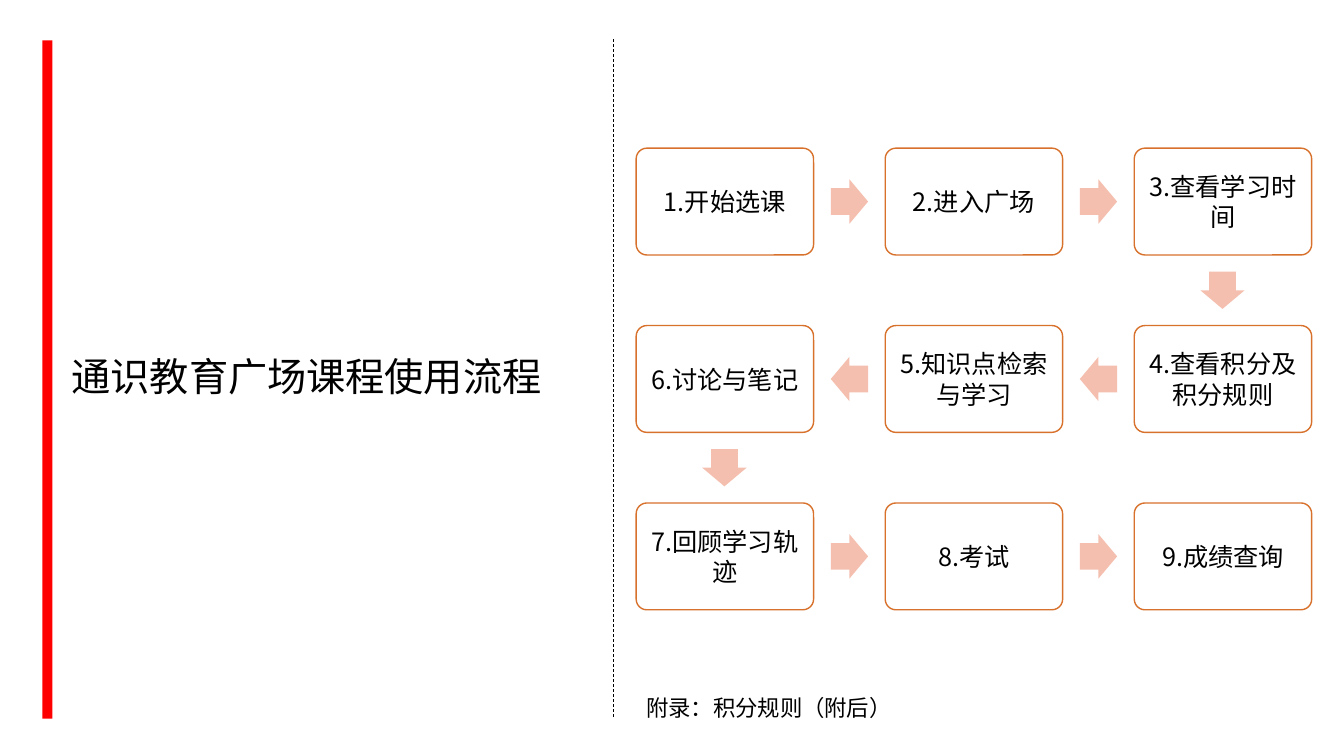
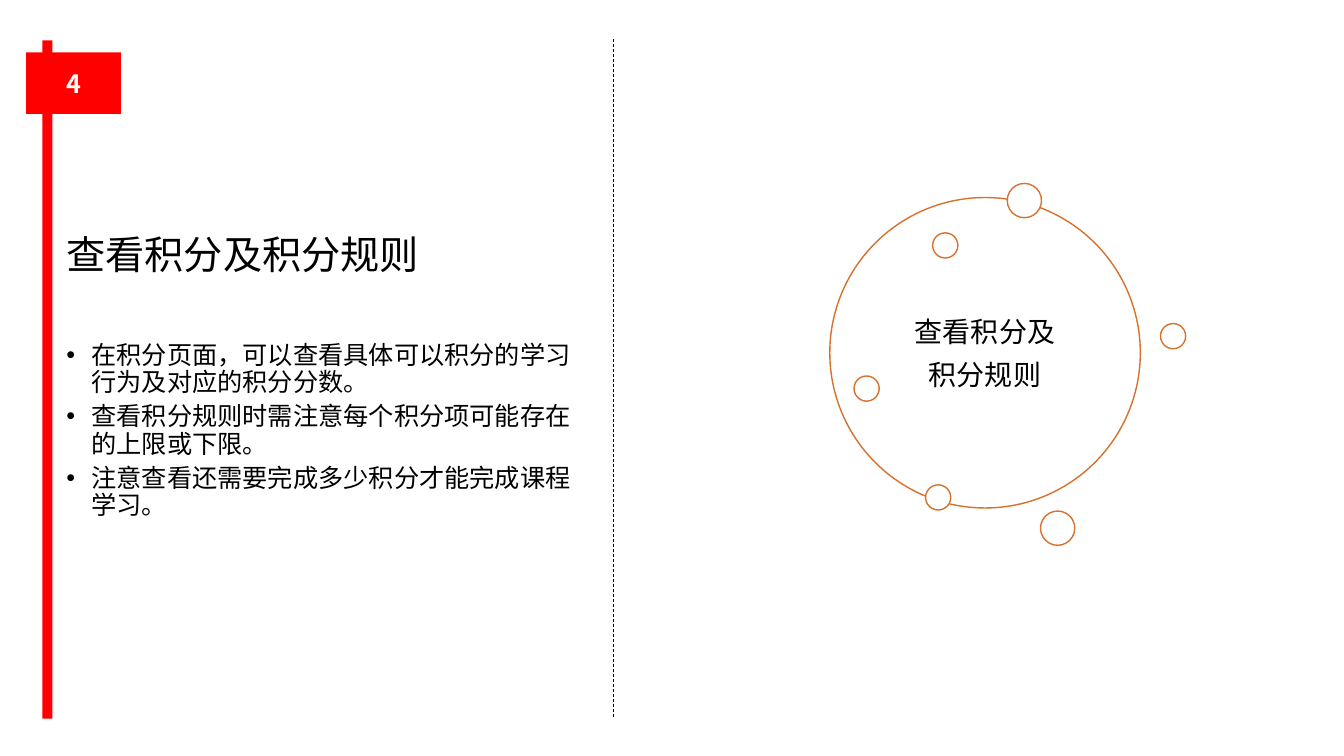
from lxml.etree import SubElement
from pptx import Presentation
from pptx.dml.color import RGBColor
from pptx.enum.dml import MSO_LINE
from pptx.enum.shapes import MSO_CONNECTOR, MSO_SHAPE
from pptx.enum.text import MSO_ANCHOR, MSO_AUTO_SIZE, PP_ALIGN
from pptx.oxml.ns import qn
from pptx.util import Pt

PX = 9144  # one hundredth of an inch
COLORS = {"red": "FF0000", "black": "000000", "white": "FFFFFF",
          "edge": "D7712C", "arrow": "F4BFAE"}
FONT = "Noto Sans CJK SC"

STEPS = ["1.开始选课", "2.进入广场", "3.查看学习时间",
         "4.查看积分及积分规则", "5.知识点检索与学习", "6.讨论与笔记",
         "7.回顾学习轨迹", "8.考试", "9.成绩查询"]
POINTS = ["在积分页面，可以查看具体可以积分的学习行为及对应的积分分数。",
          "查看积分规则时需注意每个积分项可能存在的上限或下限。",
          "注意查看还需要完成多少积分才能完成课程学习。"]
# left, top, size
DOTS = [(999, 182, 34), (918, 481, 25), (1151, 321, 25),
        (1032, 507, 34), (925, 231, 25), (847, 373, 25)]


def color(name):
    return RGBColor.from_string(COLORS[name])


def scale(*sizes):
    return [size * PX for size in sizes]


class Deck:
    def __init__(self):
        self.prs = Presentation()
        self.prs.slide_width, self.prs.slide_height = scale(1333, 750)
        self.slide = None

    def start(self, title, box, font=FONT):
        """Add a slide with its red bar, dashed divider and title."""
        self.slide = self.prs.slides.add_slide(self.prs.slide_layouts[5])
        self.shape(MSO_SHAPE.RECTANGLE, (42, 40, 10, 673), "red")
        self.divide(608, 39, 712)
        head = self.slide.shapes.title
        head.left, head.top, head.width, head.height = scale(*box)
        self.label(head, [title], 28, font=font, ratio=0.9)

    def shape(self, kind, box, fill, line=None):
        shape = self.slide.shapes.add_shape(kind, *scale(*box))
        shape.shadow.inherit = False
        shape.fill.solid()
        shape.fill.fore_color.rgb = color(fill)
        if line:
            shape.line.color.rgb = color(line)
            shape.line.width = Pt(1)
        else:
            shape.line.fill.background()
        return shape

    def divide(self, x, top, bottom):
        line = self.slide.shapes.add_connector(
            MSO_CONNECTOR.STRAIGHT, *scale(x, top, x, bottom))
        line.line.color.rgb = color("black")
        line.line.width = Pt(0.5)
        line.line.dash_style = MSO_LINE.DASH
        SubElement(line._element.spPr, qn("a:effectLst"))

    def label(self, shape, lines, size, font=FONT, ink="black", bold=False,
              align=PP_ALIGN.LEFT, anchor=MSO_ANCHOR.MIDDLE, ratio=1.0,
              gap=0, bullet=None, inset=(10, 5)):
        """Fill a shape with one paragraph per line, gap points apart."""
        side, end = scale(*inset)
        frame = shape.text_frame
        style = {"word_wrap": True, "auto_size": MSO_AUTO_SIZE.NONE,
                 "vertical_anchor": anchor, "margin_left": side,
                 "margin_right": side, "margin_top": end,
                 "margin_bottom": end}
        for key, value in style.items():
            setattr(frame, key, value)
        for index, line in enumerate(lines):
            para = frame.add_paragraph() if index else frame.paragraphs[0]
            if bullet:
                self.mark(para, bullet)
            form = {"alignment": align, "line_spacing": ratio,
                    "space_before": Pt(gap if index else 0)}
            for key, value in form.items():
                setattr(para, key, value)
            run = para.add_run()
            run.text = line
            for key, value in {"name": font, "size": Pt(size),
                               "bold": bold}.items():
                setattr(run.font, key, value)
            run.font.color.rgb = color(ink)
            SubElement(run._r.get_or_add_rPr(), qn("a:ea"), typeface=FONT)

    def mark(self, para, sign):
        """Give a paragraph a hanging bullet."""
        props = para._p.get_or_add_pPr()
        props.set("marL", str(25 * PX))
        props.set("indent", str(-25 * PX))
        SubElement(props, qn("a:buFont"), typeface="Arial")
        SubElement(props, qn("a:buChar"), char=sign)

    def text(self, box, lines, size, **style):
        area = self.slide.shapes.add_textbox(*scale(*box))
        self.label(area, lines, size, **style)

    def card(self, box, step):
        card = self.shape(MSO_SHAPE.ROUNDED_RECTANGLE, box, "white", "edge")
        card.adjustments[0] = 0.1
        self.label(card, [step], 18, align=PP_ALIGN.CENTER, inset=(4, 7))

    def arrow(self, box, angle):
        arrow = self.shape(MSO_SHAPE.RIGHT_ARROW, box, "arrow")
        arrow.adjustments[0] = 0.6
        arrow.rotation = angle

    def flow(self, steps, left, top, cols=3):
        """Lay the steps out in rows that turn back and forth."""
        wide, high, step_x, step_y = 176, 106, 247, 176
        long, thick = 37, 44
        spots = []
        for index in range(len(steps)):
            row, col = divmod(index, cols)
            if row % 2:
                col = cols - 1 - col
            spots.append((left + col * step_x, top + row * step_y))
        for (x, y), step in zip(spots, steps):
            self.card((x, y, wide, high), step)
        for (x, y), (to_x, to_y) in zip(spots, spots[1:]):
            angle = 90 if to_y > y else 0 if to_x > x else 180
            self.arrow(((x + to_x + wide - long) // 2,
                        (y + to_y + high - thick) // 2, long, thick), angle)

    def ring(self, box, lines, dots):
        ring = self.shape(MSO_SHAPE.OVAL, box, "white", "edge")
        self.label(ring, lines, 20, align=PP_ALIGN.CENTER, gap=7,
                   inset=(8, 8))
        for x, y, size in dots:
            self.shape(MSO_SHAPE.OVAL, (x, y, size, size), "white", "edge")

    def badge(self, number):
        badge = self.shape(MSO_SHAPE.RECTANGLE, (26, 52, 94, 61), "red")
        self.label(badge, [number], 18, ink="white", bold=True,
                   align=PP_ALIGN.CENTER)


def main():
    deck = Deck()
    deck.start("通识教育广场课程使用流程", (61, 39, 524, 673), "Arial")
    deck.flow(STEPS, 631, 147)
    deck.text((631, 684, 524, 37), ["附录：积分规则（附后）"], 16,
              anchor=MSO_ANCHOR.TOP)

    deck.start("查看积分及积分规则", (56, 225, 530, 60))
    deck.text((56, 320, 530, 216), POINTS, 18, ratio=0.9, gap=5, bullet="•")
    deck.badge("4")
    deck.ring((823, 196, 308, 308), ["查看积分及", "积分规则"], DOTS)
    deck.prs.save("out.pptx")


if __name__ == "__main__":
    main()
